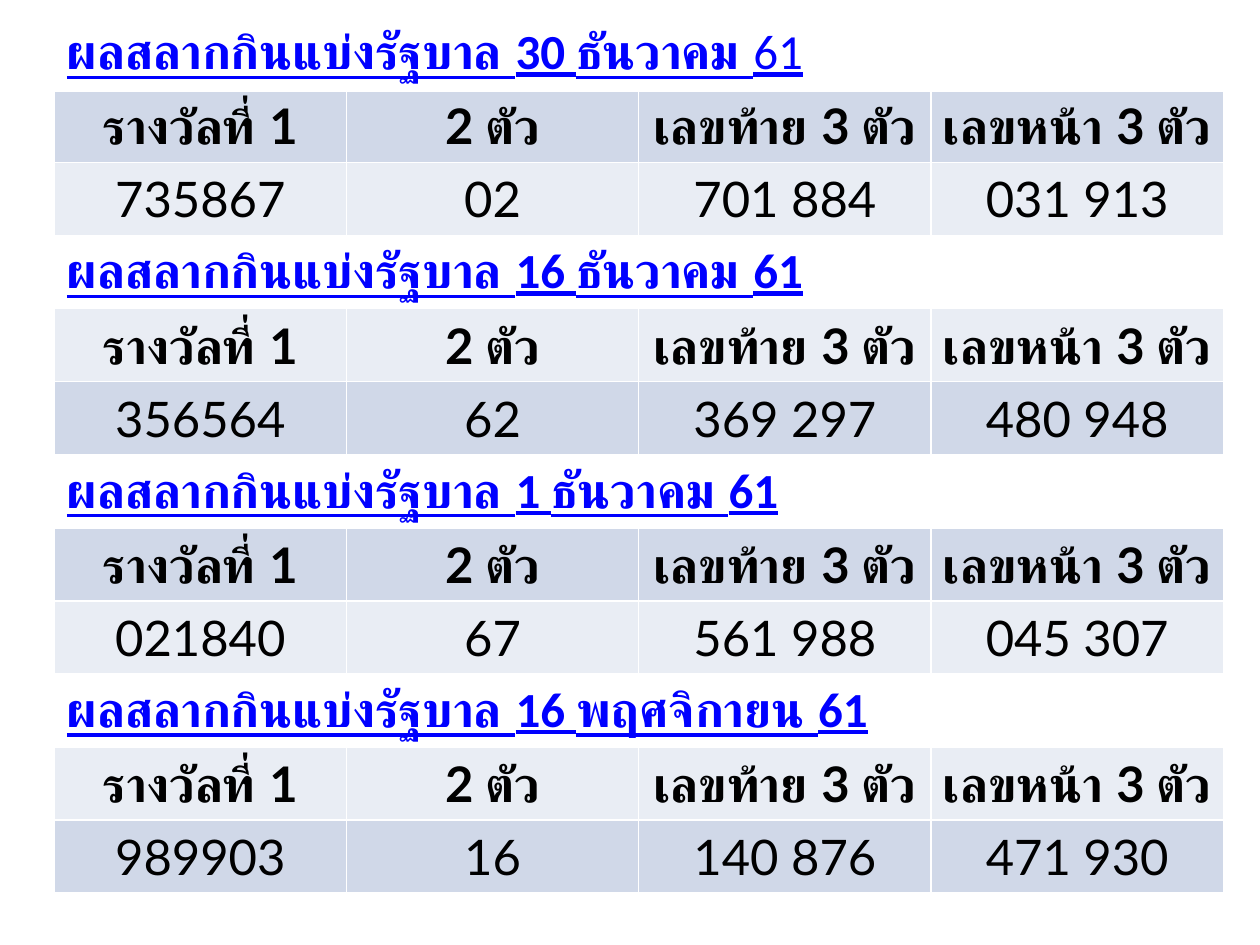
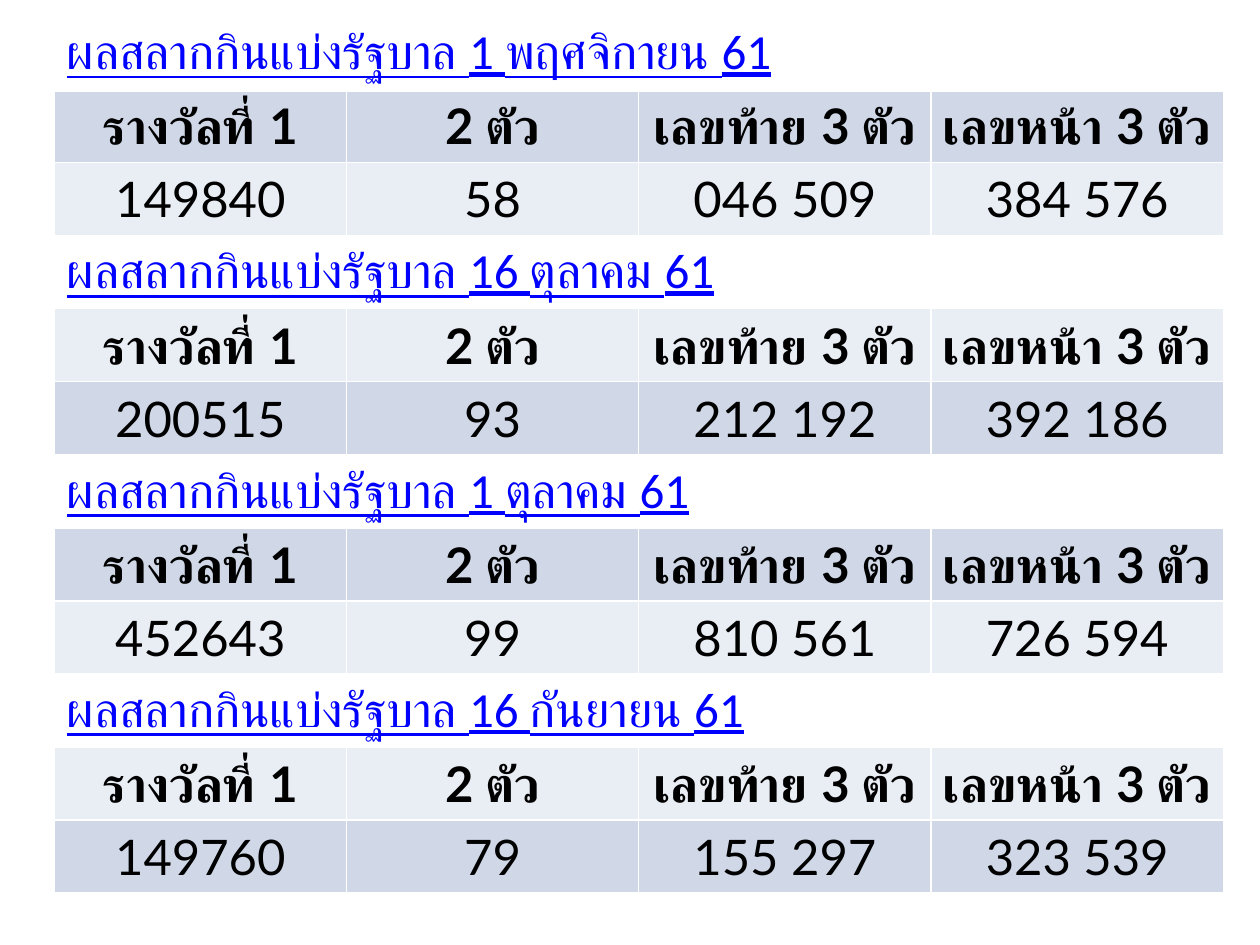
from dataclasses import dataclass

from lxml import etree
from pptx import Presentation
from pptx import util as u
from pptx.dml import color
from pptx.enum import text
from pptx.oxml import ns

WHITE, BLACK, LINK_BLUE = "FFFFFF", "000000", "0000FF"
BANDS = ("D0D8E8", "E9EDF4")
HEADING_FONT, CELL_FONT = "Calibri", "Lato"
TEXT_SIZE = 28
TABLE_BOX = (0.43, 0.13, 9.28, 6.96)
HEADING = "ผลสลากกินแบ่งรัฐบาล"
YEAR = "61"
PRIZES = ("รางวัลที่ 1", "2 ตัว", "เลขท้าย 3 ตัว", "เลขหน้า 3 ตัว")
ROWS_PER_DRAW = 3


@dataclass
class Draw:
    date: str
    numbers: tuple
    bold: bool = False
    bold_year: bool = False


SLIDES = (
    (
        Draw("30 ธันวาคม", ("735867", "02", "701 884", "031 913"), True),
        Draw("16 ธันวาคม", ("356564", "62", "369 297", "480 948"), True, True),
        Draw("1 ธันวาคม", ("021840", "67", "561 988", "045 307"), True, True),
        Draw("16 พฤศจิกายน", ("989903", "16", "140 876", "471 930"), True, True),
    ),
    (
        Draw("1 พฤศจิกายน", ("149840", "58", "046 509", "384 576")),
        Draw("16 ตุลาคม", ("200515", "93", "212 192", "392 186")),
        Draw("1 ตุลาคม", ("452643", "99", "810 561", "726 594")),
        Draw("16 กันยายน", ("149760", "79", "155 297", "323 539")),
    ),
)


def rgb(hex_value):
    return color.RGBColor.from_string(hex_value)


def add_run(paragraph, words, font_name, font_color, bold, underline=False):
    run = paragraph.add_run()
    run.text = words
    font = run.font
    font.name, font.size = font_name, u.Pt(TEXT_SIZE)
    font.bold, font.underline = bold, underline
    font.color.rgb = rgb(font_color)


def set_borders(cell, bottom_width=1):
    properties = cell._tc.get_or_add_tcPr()
    widths = {"a:lnL": 1, "a:lnR": 1, "a:lnT": 1, "a:lnB": bottom_width}
    for position, (tag, width) in enumerate(widths.items()):
        line = etree.Element(ns.qn(tag), w=str(u.Pt(width)))
        fill = etree.SubElement(line, ns.qn("a:solidFill"))
        etree.SubElement(fill, ns.qn("a:srgbClr"), val=WHITE)
        properties.insert(position, line)


def fill_heading(table, row, draw):
    heading = table.cell(row, 0)
    heading.merge(table.cell(row, len(PRIZES) - 1))
    for cell in table.rows[row].cells:
        cell.fill.background()
        set_borders(cell, 3 if row == 0 else 1)
    heading.vertical_anchor = text.MSO_ANCHOR.MIDDLE
    paragraph = heading.text_frame.paragraphs[0]
    for words, bold in ((f"{HEADING} {draw.date} ", draw.bold), (YEAR, draw.bold_year)):
        add_run(paragraph, words, HEADING_FONT, LINK_BLUE, bold, True)


def fill_row(table, row, values, band, bold):
    for cell, value in zip(table.rows[row].cells, values):
        cell.fill.solid()
        cell.fill.fore_color.rgb = rgb(band)
        set_borders(cell)
        cell.margin_left = cell.margin_right = u.Inches(0.03)
        cell.vertical_anchor = text.MSO_ANCHOR.MIDDLE
        paragraph = cell.text_frame.paragraphs[0]
        paragraph.alignment = text.PP_ALIGN.CENTER
        add_run(paragraph, value, CELL_FONT, BLACK, bold)


def add_results_table(slide, box, draws):
    row_count = ROWS_PER_DRAW * len(draws)
    frame = slide.shapes.add_table(row_count, len(PRIZES), *map(u.Inches, box))
    table = frame.table
    table.first_row = table.horz_banding = False
    for index, draw in enumerate(draws):
        top_row = index * ROWS_PER_DRAW
        fill_heading(table, top_row, draw)
        fill_row(table, top_row + 1, PRIZES, BANDS[index % 2], True)
        fill_row(table, top_row + 2, draw.numbers, BANDS[(index + 1) % 2], False)


def main():
    presentation = Presentation()
    presentation.slide_width, presentation.slide_height = u.Inches(10), u.Inches(7.5)
    blank_layout = presentation.slide_layouts.get_by_name("Blank")
    for draws in SLIDES:
        add_results_table(presentation.slides.add_slide(blank_layout), TABLE_BOX, draws)
    presentation.save("out.pptx")


if __name__ == "__main__":
    main()
